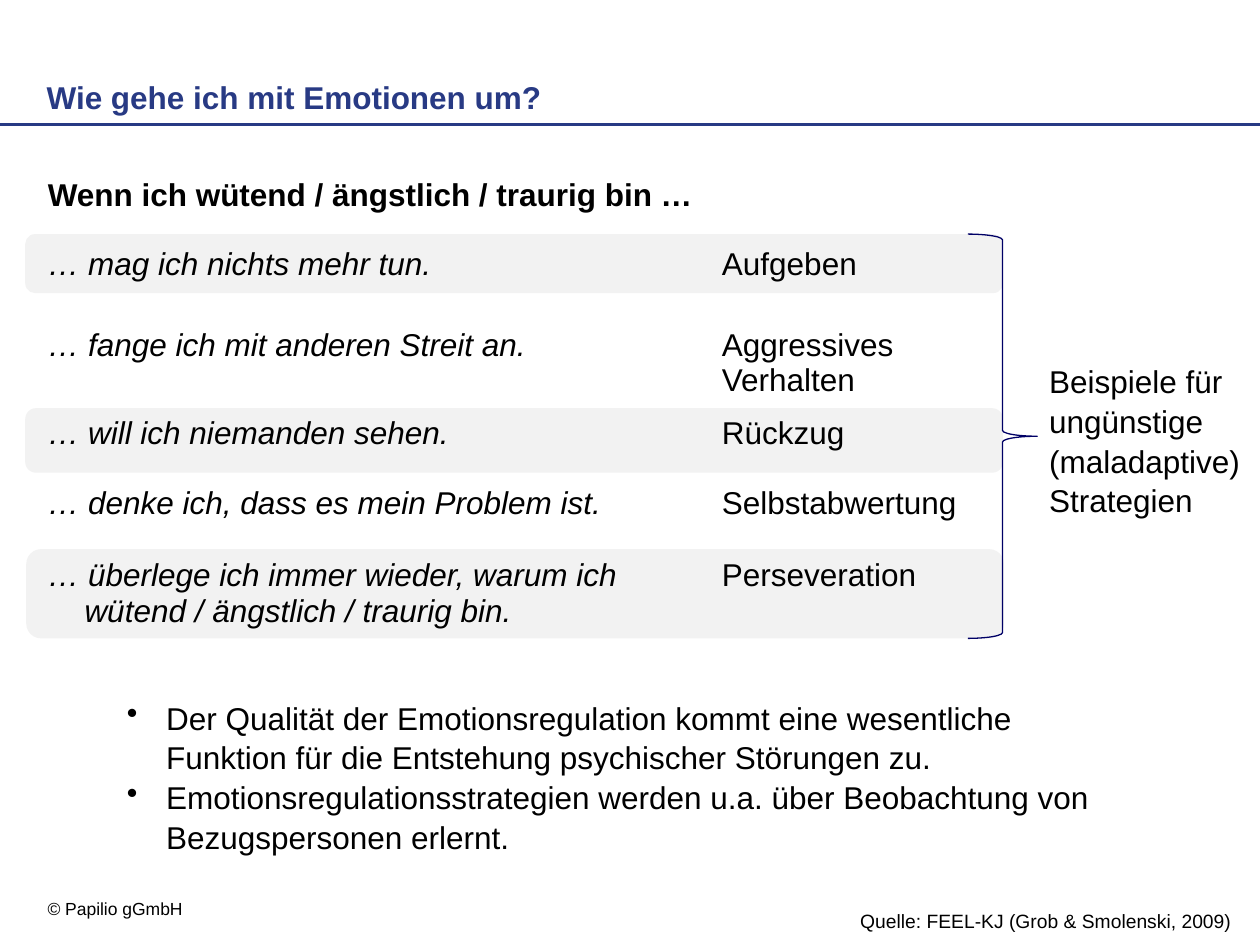
from pptx import Presentation
from pptx import util as u
from pptx.dml.color import RGBColor
from pptx.enum import shapes, text
from pptx.oxml import xmlchemy
from pptx.oxml.ns import qn
from dataclasses import dataclass

TITLE = "Wie gehe ich mit Emotionen um?"
QUESTION = "Wenn ich wütend / ängstlich / traurig bin …"
STRATEGIES = [
    # sentence, strategy, row height, hanging indent
    ("… mag ich nichts mehr tun.", "Aufgeben", 1.63, 0.99),
    ("… fange ich mit anderen Streit an.", "Aggressives Verhalten", 1.4, 0),
    ("… will ich niemanden sehen.", "Rückzug", 1.42, 0),
    ("… denke ich, dass es mein Problem ist.", "Selbstabwertung", 1.45, 0),
    ("… überlege ich immer wieder, warum ich wütend / ängstlich / traurig bin.",
     "Perseveration", 2.39, 0.74),
]
SUMMARY = "Beispiele für ungünstige (maladaptive) Strategien"
FINDINGS = [
    "Der Qualität der Emotionsregulation kommt eine wesentliche Funktion "
    "für die Entstehung psychischer Störungen zu.",
    "Emotionsregulationsstrategien werden u.a. über Beobachtung von "
    "Bezugspersonen erlernt.",
]
SOURCE = "Quelle: FEEL-KJ (Grob & Smolenski, 2009)"
COPYRIGHT = "© Papilio gGmbH"
BANDS = [(0.51, 4.72, 1.19), (0.51, 8.23, 1.3), (0.53, 11.07, 1.8)]
BAND_WIDTH = 19.71
HEADING_HEIGHT = 1.4
COLUMNS = (13.59, 5.41)
NO_TABLE_STYLE = "{2D5ABB26-0587-4C30-8999-92F81FD0307C}"


@dataclass(frozen=True)
class Theme:
    font: str = "Arial"
    ink: str = "000000"
    blue: str = "283A84"
    navy: str = "000066"
    band: str = "F2F2F2"
    body: float = 18
    source: float = 11
    copyright: float = 10


THEME = Theme()


def rgb(value):
    return RGBColor.from_string(value)


def place(*lengths):
    return [u.Cm(length) for length in lengths]


def write(frame, *lines, size=THEME.body, color=THEME.ink, bold=False,
          italic=False, indent=0, bullet=None, spacing=None):
    """Fill a text frame with one paragraph per line in a single format."""
    frame.word_wrap = True
    for number, line in enumerate(lines):
        para = frame.add_paragraph() if number else frame.paragraphs[0]
        properties = para._p.get_or_add_pPr()
        if indent:
            properties.set("marL", str(u.Cm(indent)))
            properties.set("indent", str(-u.Cm(indent)))
        if bullet:
            mark = xmlchemy.OxmlElement("a:buChar")
            mark.set("char", bullet)
            properties.append(mark)
        if spacing:
            para.line_spacing = spacing
        span = para.add_run()
        span.text = line
        font = span.font
        font.name, font.size = THEME.font, u.Pt(size)
        font.bold, font.italic = bold, italic
        font.color.rgb = rgb(color)


def add_text(page, area, *lines, **style):
    box = page.shapes.add_textbox(*place(*area))
    write(box.text_frame, *lines, **style)


def add_rule(page):
    rule = page.shapes.add_connector(
        shapes.MSO_CONNECTOR.STRAIGHT, *place(0, 2.51, 25.4, 2.51))
    rule.line.color.rgb = rgb(THEME.blue)
    rule.line.width = u.Pt(1.5)
    rule._element.spPr.append(xmlchemy.OxmlElement("a:effectLst"))


def add_bands(page):
    for left, top, height in BANDS:
        band = page.shapes.add_shape(
            shapes.MSO_SHAPE.ROUNDED_RECTANGLE, *place(left, top, BAND_WIDTH, height))
        band.shadow.inherit = False
        band.fill.solid()
        band.fill.fore_color.rgb = rgb(THEME.band)
        band.line.fill.background()


def add_strategies(page):
    heights = [HEADING_HEIGHT] + [row[2] for row in STRATEGIES]
    frame = page.shapes.add_table(
        len(heights), len(COLUMNS), *place(0.71, 3.45, sum(COLUMNS), sum(heights)))
    table = frame.table
    table.first_row = table.horz_banding = False
    table._tbl.tblPr.find(qn("a:tableStyleId")).text = NO_TABLE_STYLE
    for column, width in zip(table.columns, COLUMNS):
        column.width = u.Cm(width)
    for row, height in zip(table.rows, heights):
        row.height = u.Cm(height)
    for cell in table.iter_cells():
        cell.fill.background()
        cell.vertical_anchor = text.MSO_ANCHOR.TOP
    write(table.cell(0, 0).text_frame, QUESTION, bold=True)
    for number, (sentence, strategy, _, indent) in enumerate(STRATEGIES, 1):
        write(table.cell(number, 0).text_frame, sentence, italic=True, indent=indent)
        write(table.cell(number, 1).text_frame, strategy)


def add_brace(page):
    brace = page.shapes.add_shape(
        shapes.MSO_SHAPE.RIGHT_BRACE, *place(19.51, 4.72, 1.4, 8.15))
    brace.shadow.inherit = False
    brace.fill.background()
    brace.line.color.rgb = rgb(THEME.navy)
    brace.line.width = u.Pt(0.75)


def main():
    deck = Presentation()
    deck.slide_width, deck.slide_height = place(25.4, 19.05)
    page = deck.slides.add_slide(deck.slide_layouts[6])
    add_rule(page)
    add_text(page, (0.71, 17.98, 5.51, 0.69), COPYRIGHT, size=THEME.copyright)
    add_bands(page)
    add_text(page, (0.69, 1.45, 19.41, 0.99), TITLE, color=THEME.blue, bold=True)
    add_strategies(page)
    add_brace(page)
    add_text(page, (20.9, 7.14, 4.6, 3.33), SUMMARY, spacing=1.05)
    add_text(page, (17.09, 18.21, 8.1, 0.74), SOURCE, size=THEME.source)
    add_text(page, (2.31, 13.92, 20.9, 3.33), *FINDINGS,
             indent=0.79, bullet="•", spacing=1.05)
    deck.save("out.pptx")


if __name__ == "__main__":
    main()
